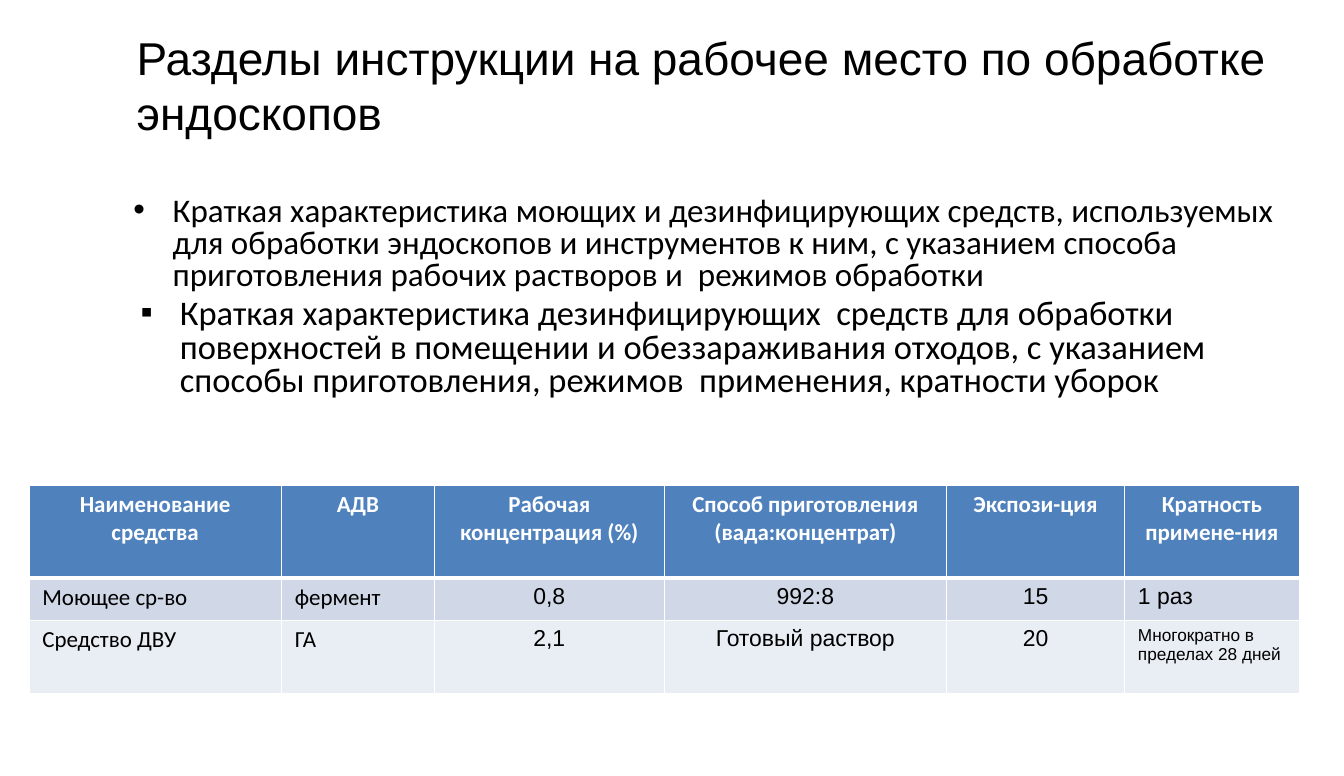
from lxml import etree
from pptx import Presentation, util as u
from pptx.dml.color import RGBColor
from pptx.enum import text
from pptx.oxml import ns

HUES = {"ink": "000000", "paper": "FFFFFF", "head": "4F81BD",
        "odd": "D0D8E8", "even": "E9EDF4"}
LEFT, MID = text.PP_ALIGN.LEFT, text.PP_ALIGN.CENTER

TITLE = "Разделы инструкции на рабочее место по обработке эндоскопов"
# mark, left indent, size, wording
POINTS = [
    ("•", 0.38, 23, "Краткая характеристика моющих и дезинфицирующих средств, "
     "используемых для обработки эндоскопов и инструментов к ним, с указанием "
     "способа приготовления рабочих растворов и  режимов обработки"),
    ("▪", 0.45, 24, "Краткая характеристика дезинфицирующих  средств для обработки "
     "поверхностей в помещении и обеззараживания отходов, с указанием  способы "
     "приготовления, режимов  применения, кратности уборок"),
]
COLS = [2.44, 1.48, 2.22, 2.73, 1.72, 1.69]
ROWS = [0.9, 0.41, 0.7]
CELLS = [
    ["Наименование средства", "АДВ", "Рабочая\nконцентрация (%)",
     "Способ приготовления\n(вада:концентрат)", "Экспози-ция",
     "Кратность\nпримене-ния"],
    ["Моющее ср-во", "фермент", "0,8", "992:8", "15", "1 раз"],
    ["Средство ДВУ", "ГА", "2,1", "Готовый раствор", "20",
     "Многократно в пределах 28 дней"],
]


def rgb(hue):
    return RGBColor.from_string(HUES[hue])


def put(thing, **vals):
    for key, val in vals.items():
        setattr(thing, key, val)


def style(para, hue, **vals):
    for run in para.runs:
        put(run.font, **vals)
        run.font.color.rgb = rgb(hue)


def place(shape, box):
    for key, val in zip(("left", "top", "width", "height"), box):
        setattr(shape, key, u.Inches(val))


def add_title(slide, box):
    shape = slide.shapes.title
    place(shape, box)
    frame = shape.text_frame
    frame.text = TITLE
    put(frame, word_wrap=True, vertical_anchor=text.MSO_ANCHOR.MIDDLE)
    para = frame.paragraphs[0]
    para.alignment = LEFT
    style(para, "ink", name="Arial", size=u.Pt(32))


def add_points(slide, box):
    frame = slide.shapes.add_textbox(*map(u.Inches, box)).text_frame
    frame.word_wrap = True
    for i, (mark, left, size, words) in enumerate(POINTS):
        para = frame.add_paragraph() if i else frame.paragraphs[0]
        # Hanging bullet
        props = para._p.get_or_add_pPr()
        props.set("marL", str(u.Inches(left)))
        props.set("indent", str(u.Inches(-0.38)))
        etree.SubElement(props, ns.qn("a:buFont"), typeface="Arial")
        etree.SubElement(props, ns.qn("a:buChar"), char=mark)
        put(para, line_spacing=0.8, space_before=u.Pt(4.8 if i else 0))
        para.add_run().text = words
        style(para, "ink", name="Calibri", size=u.Pt(size))


def add_edges(cell, widths):
    props = cell._tc.get_or_add_tcPr()
    for side, width in widths.items():
        line = etree.SubElement(props, ns.qn("a:ln" + side), w=str(u.Pt(width)))
        fill = etree.SubElement(line, ns.qn("a:solidFill"))
        etree.SubElement(fill, ns.qn("a:srgbClr"), val=HUES["paper"])


def add_grid(slide, box):
    grid = slide.shapes.add_table(len(ROWS), len(COLS), *map(u.Inches, box)).table
    for col, width in zip(grid.columns, COLS):
        col.width = u.Inches(width)
    for r, high in enumerate(ROWS):
        grid.rows[r].height = u.Inches(high)
        for c, words in enumerate(CELLS[r]):
            cell = grid.cell(r, c)
            cell.text = words
            put(cell, margin_left=u.Inches(0.13), margin_right=u.Inches(0.13))
            # Thick rule under the header, thin ones elsewhere
            add_edges(cell, {"L": 1, "R": 1, "T": 3 if r == 1 else 1,
                             "B": 1 if r else 3})
            cell.fill.solid()
            cell.fill.fore_color.rgb = rgb(("head", "odd", "even")[r])
            last = (r, c) == (2, 5)
            for para in cell.text_frame.paragraphs:
                para.alignment = MID if r == 0 or c in (2, 3, 4) else LEFT
                style(para, "ink" if r else "paper", bold=r == 0,
                      name="Arial" if r and c > 1 else "Calibri",
                      size=u.Pt(12 if last else 16))


def main():
    deck = Presentation()
    put(deck, slide_width=u.Inches(12.99), slide_height=u.Inches(7.5))
    slide = deck.slides.add_slide(deck.slide_layouts[5])
    add_title(slide, (1.22, 0.23, 11.47, 1.18))
    add_points(slide, (1.19, 1.86, 11.5, 2.3))
    add_grid(slide, (0.28, 4.69, sum(COLS), sum(ROWS)))
    deck.save("out.pptx")


if __name__ == "__main__":
    main()
